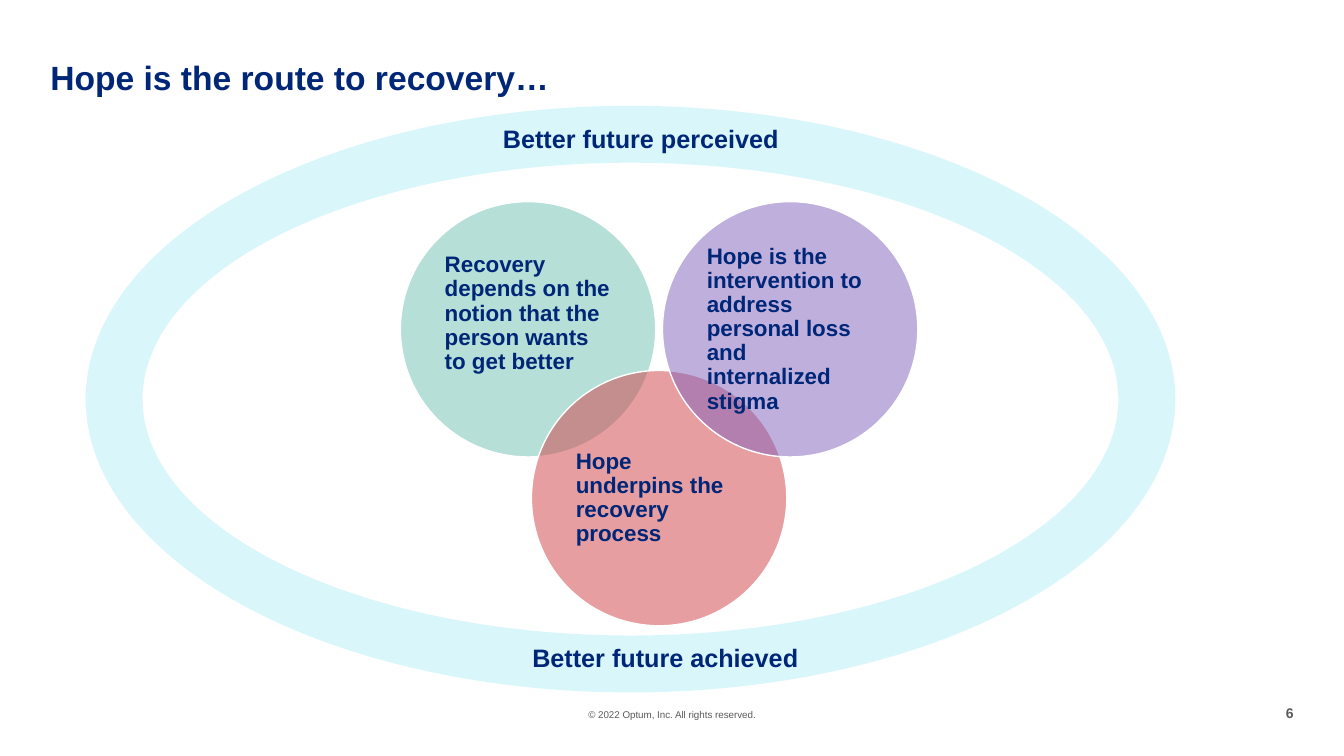
import dataclasses

import lxml.etree
import pptx
import pptx.dml.color
import pptx.enum.shapes
import pptx.enum.text
import pptx.oxml.ns
import pptx.util

Pt = pptx.util.Pt
Align = pptx.enum.text.PP_ALIGN
Anchor = pptx.enum.text.MSO_ANCHOR
Preset = pptx.enum.shapes.MSO_SHAPE


@dataclasses.dataclass(frozen=True)
class Theme:
    font: str = "Arial"
    navy: str = "002677"
    grey: str = "5A5A5A"
    white: str = "FFFFFF"
    ring: str = "D9F6FA"
    green: str = "6FC1B1"
    red: str = "D13F44"
    purple: str = "8061BC"
    title_size: int = 24
    label_size: int = 18
    circle_size: int = 16
    number_size: int = 10
    footer_size: int = 7


THEME = Theme()


def rgb(color):
    return pptx.dml.color.RGBColor.from_string(color)


def add_text(slide, box, text, size, color=THEME.navy, bold=True,
             align=Align.LEFT, anchor=Anchor.TOP, spacing=1.0, inset=0):
    textbox = slide.shapes.add_textbox(*(Pt(value) for value in box))
    frame = textbox.text_frame
    frame.word_wrap = True
    frame.vertical_anchor = anchor
    frame.margin_left = frame.margin_right = Pt(inset)
    frame.margin_top = frame.margin_bottom = Pt(inset)
    paragraph = frame.paragraphs[0]
    paragraph.text = text
    paragraph.alignment = align
    paragraph.line_spacing = spacing
    paragraph.font.name = THEME.font
    paragraph.font.size = Pt(size)
    paragraph.font.bold = bold
    paragraph.font.color.rgb = rgb(color)


def add_round(slide, preset, box, color):
    shape = slide.shapes.add_shape(preset, *(Pt(value) for value in box))
    shape.shadow.inherit = False
    shape.fill.solid()
    shape.fill.fore_color.rgb = rgb(color)
    shape.line.fill.background()
    return shape


def add_circle(slide, box, text, color, lift=0):
    """Half-transparent circle with its text, raised by lift points."""
    left, top, width, height = box
    circle = add_round(slide, Preset.OVAL, box, color)
    circle.line.color.rgb = rgb(THEME.white)
    circle.line.width = Pt(1)
    fill_color = circle.fill._xPr.find(".//" + pptx.oxml.ns.qn("a:srgbClr"))
    lxml.etree.SubElement(fill_color, pptx.oxml.ns.qn("a:alpha"), val="50000")

    margin = 26.7
    text_box = (left + margin, top + margin - lift,
                width - 2 * margin, height - 2 * margin)
    add_text(slide, text_box, text, THEME.circle_size,
             anchor=Anchor.MIDDLE, spacing=0.9, inset=5)


def add_circles(slide, box):
    """Two circles side by side, a third centred below them."""
    left, top, width, height = box
    diameter = 182.4
    right = left + width - diameter
    bottom = top + height - diameter
    circles = [
        (left, top, THEME.green, 11,
         "Recovery depends on the notion that the person wants to get better"),
        ((left + right) / 2, bottom, THEME.red, 0,
         "Hope underpins the recovery process"),
        (right, top, THEME.purple, 0,
         "Hope is the intervention to address personal loss "
         "and internalized stigma"),
    ]
    for circle_left, circle_top, color, lift, text in circles:
        add_circle(slide, (circle_left, circle_top, diameter, diameter),
                   text, color, lift)


def add_ring(slide, box):
    """Oval ring with a label on its upper and lower bands."""
    left, top, width, height = box
    ring = add_round(slide, Preset.DONUT, box, THEME.ring)
    ring.adjustments[0] = 0.097
    add_text(slide, (left + 298, top + 12.3, 204, 21.6),
             "Better future perceived", THEME.label_size)
    add_text(slide, (left + 319, top + height - 36, 226, 21.6),
             "Better future achieved", THEME.label_size)


def add_footer(slide, box):
    """Copyright line in the middle and slide number at the right."""
    left, top, width, height = box
    add_text(slide, (left, top + 3, width, height - 3),
             "© 2022 Optum, Inc. All rights reserved.", THEME.footer_size,
             THEME.grey, bold=False, align=Align.CENTER)
    number_width = 12
    add_text(slide, (924 - number_width, top, number_width, height),
             "6", THEME.number_size, THEME.grey, align=Align.RIGHT)


def build_hope_slide(presentation):
    slide = presentation.slides.add_slide(presentation.slide_layouts[6])
    add_footer(slide, (370, 503.3, 220, 12))
    add_circles(slide, (286, 144, 369.6, 303))
    add_text(slide, (36, 43.9, 756, 26), "Hope is the route to recovery…",
             THEME.title_size, spacing=0.9)
    add_ring(slide, (61.2, 75.6, 778.3, 419))


def main():
    presentation = pptx.Presentation()
    presentation.slide_width = Pt(960)
    presentation.slide_height = Pt(540)
    build_hope_slide(presentation)
    presentation.save("out.pptx")


if __name__ == "__main__":
    main()
